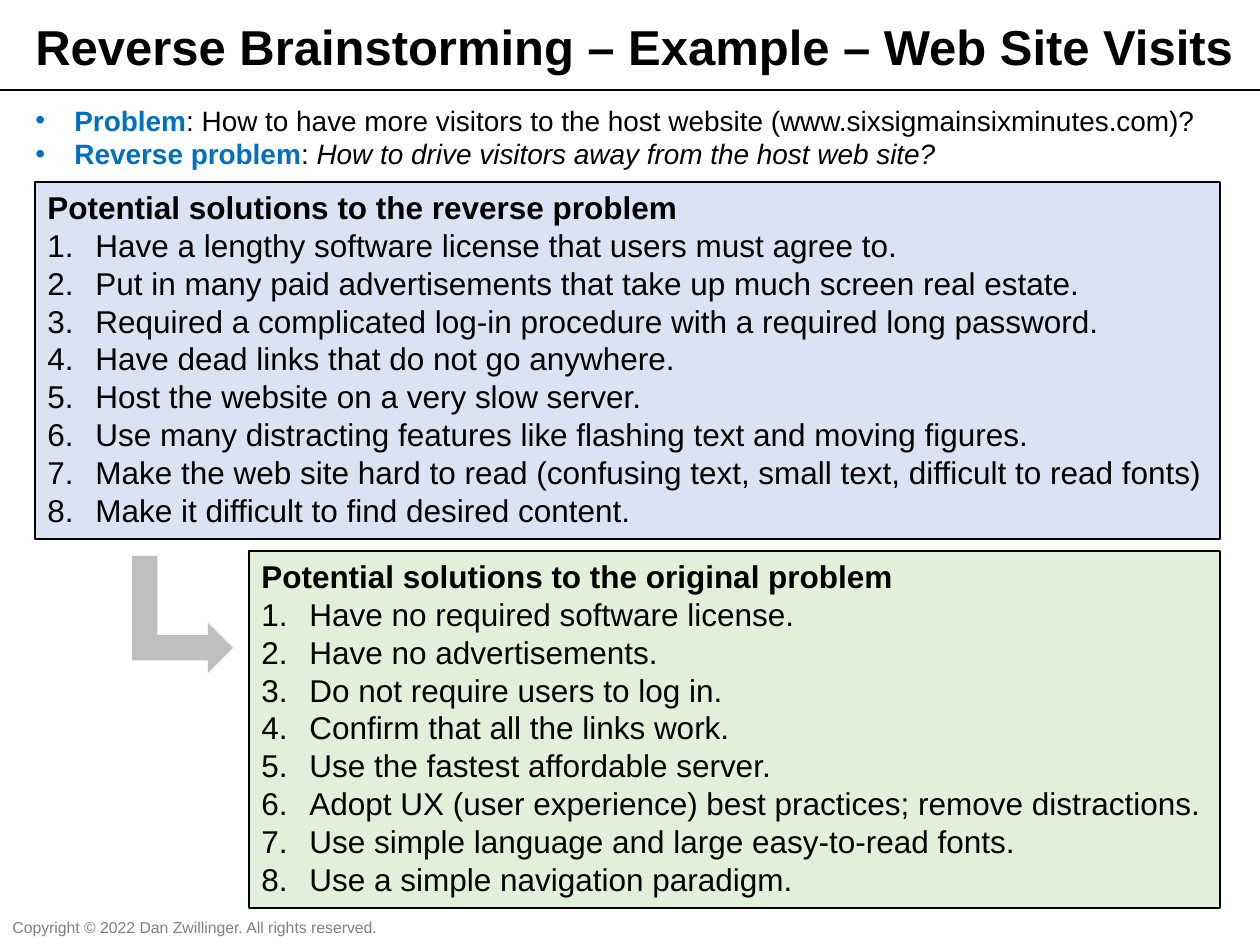
from lxml import etree
from pptx import Presentation
from pptx import util as u
from pptx.dml.color import RGBColor
from pptx.enum import shapes, text
from pptx.oxml.ns import qn

PX = 914400 / 126
COLORS = {"black": "000000", "gray": "808080", "blue": "0070C0",
          "reverse": "DAE3F3", "original": "E2F0D9", "arrow": "BFBFBF"}


def px(*values):
    return [u.Emu(round(v * PX)) for v in values]


def add_paragraph(tf, runs, size, bullet=None, indent=0):
    p = tf.paragraphs[0] if not tf.paragraphs[0].runs else tf.add_paragraph()
    p.alignment = text.PP_ALIGN.LEFT
    if bullet:
        pPr = p._p.get_or_add_pPr()
        width = px(indent)[0]
        pPr.set("marL", str(width))
        pPr.set("indent", str(-width))
        etree.SubElement(pPr, qn("a:buFont")).set("typeface", "Arial")
        for key, value in bullet[1].items():
            etree.SubElement(pPr, qn(bullet[0])).set(key, value)
    for words, color, style in runs:
        r = p.add_run()
        r.text = words
        r.font.color.rgb = RGBColor.from_string(COLORS[color])
        for key, value in {"name": "Arial", "size": u.Pt(size), **style}.items():
            setattr(r.font, key, value)


prs = Presentation()
prs.slide_width, prs.slide_height = px(1260, 945)
s = prs.slides.add_slide(prs.slide_layouts[6])

rule = s.shapes.add_connector(shapes.MSO_CONNECTOR.STRAIGHT, *px(0, 90, 1260, 90))
rule.line.color.rgb = RGBColor.from_string(COLORS["black"])
rule.line.width = u.Pt(0.75)
etree.SubElement(rule._element.spPr, qn("a:effectLst"))

bold, plain, italic = {"bold": True}, {"bold": False}, {"italic": True}
dot = ("a:buChar", {"char": "•"})
text_boxes = [
    ((23, 10, 1237, 72), True, 28, None,
     [[("Reverse Brainstorming – Example – Web Site Visits", "black", bold)]]),
    ((0, 912, 396, 32), False, 9, None,
     [[("Copyright © 2022 Dan Zwillinger. All rights reserved.", "gray", plain)]]),
    ((23, 97, 1215, 81), True, 16, dot,
     [[("Problem", "blue", bold),
       (": How to have more visitors to the host website (www.sixsigmainsixminutes.com)?",
        "black", plain)],
      [("Reverse problem", "blue", bold), (": ", "black", plain),
       ("How to drive visitors away from the host web site?", "black", italic)]]),
]
for box, wrap, size, bullet, paragraphs in text_boxes:
    tf = s.shapes.add_textbox(*px(*box)).text_frame
    tf.word_wrap = wrap
    for runs in paragraphs:
        add_paragraph(tf, runs, size, bullet, 39)

number = ("a:buAutoNum", {"type": "arabicPeriod"})
panels = [
    ("reverse", 35, 182, [
        "Have a lengthy software license that users must agree to.",
        "Put in many paid advertisements that take up much screen real estate.",
        "Required a complicated log-in procedure with a required long password.",
        "Have dead links that do not go anywhere.",
        "Host the website on a very slow server.",
        "Use many distracting features like flashing text and moving figures.",
        "Make the web site hard to read (confusing text, small text, difficult to read fonts)",
        "Make it difficult to find desired content.",
    ]),
    ("original", 249, 551, [
        "Have no required software license.",
        "Have no advertisements.",
        "Do not require users to log in.",
        "Confirm that all the links work.",
        "Use the fastest affordable server.",
        "Adopt UX (user experience) best practices; remove distractions.",
        "Use simple language and large easy-to-read fonts.",
        "Use a simple navigation paradigm.",
    ]),
]
for problem, left, top, solutions in panels:
    sp = s.shapes.add_shape(shapes.MSO_SHAPE.RECTANGLE, *px(left, top, 1220 - left, 357))
    sp.shadow.inherit = False
    sp.fill.solid()
    sp.fill.fore_color.rgb = RGBColor.from_string(COLORS[problem])
    sp.line.color.rgb = RGBColor.from_string(COLORS["black"])
    sp.line.width = u.Pt(0.75)
    tf = sp.text_frame
    tf.word_wrap = True
    tf.vertical_anchor = text.MSO_ANCHOR.TOP
    add_paragraph(tf, [(f"Potential solutions to the {problem} problem", "black", bold)], 18)
    for solution in solutions:
        add_paragraph(tf, [(solution, "black", plain)], 18, number, 48)

arrow = s.shapes.add_shape(shapes.MSO_SHAPE.BENT_UP_ARROW, *px(124, 564, 117, 101))
arrow.rotation = 90
arrow.shadow.inherit = False
arrow.fill.solid()
arrow.fill.fore_color.rgb = RGBColor.from_string(COLORS["arrow"])
arrow.line.fill.background()

prs.save("out.pptx")
